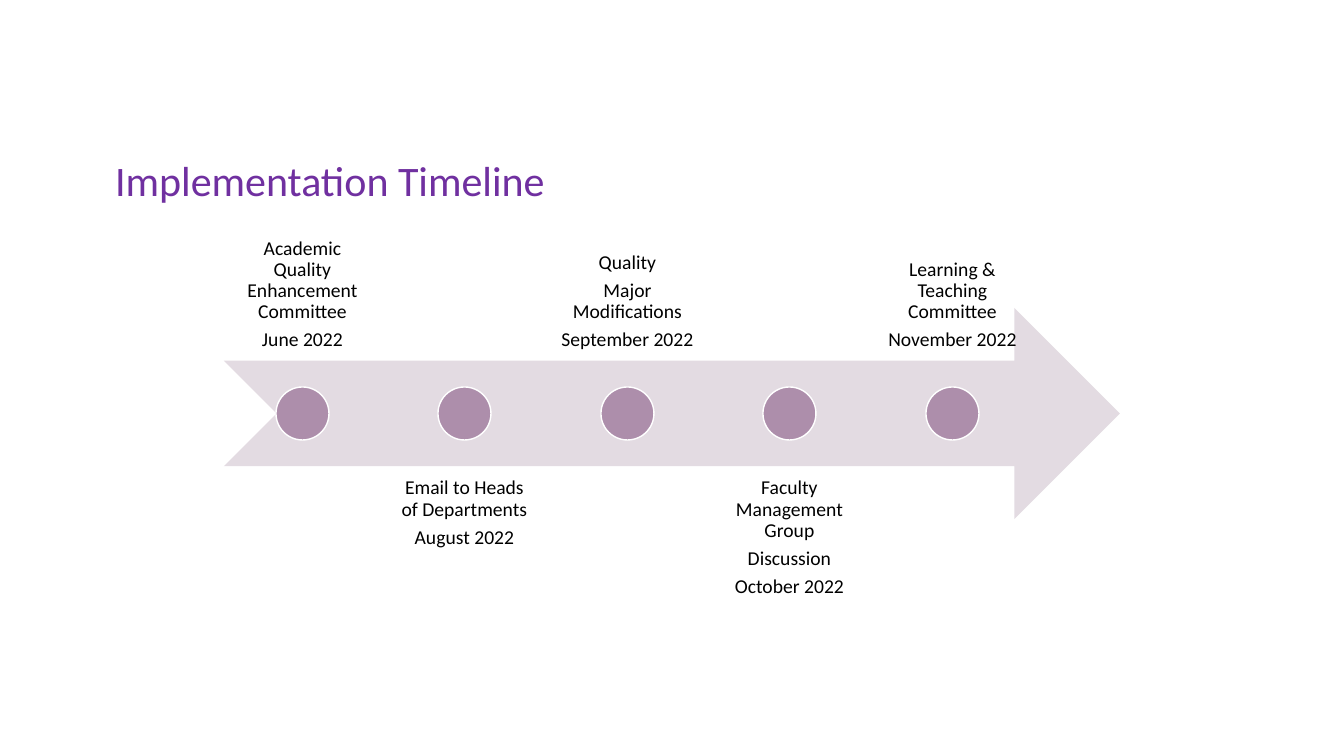
from pptx import Presentation
from pptx.dml.color import RGBColor
from pptx.enum.shapes import MSO_SHAPE
from pptx.enum.text import MSO_ANCHOR, MSO_AUTO_SIZE, PP_ALIGN
from pptx.util import Pt

PX = 914400 / 100.8
SLIDE_W, SLIDE_H = 1344, 756
ARROW_X, ARROW_Y, ARROW_W, ARROW_H = 224, 308, 896, 211
MIDDLE_Y = 413
FIRST_X, LAST_X = 302, 952
DOT = 53
LABEL_W, LABEL_H = 155, 211
UPPER_Y, LOWER_Y = 151, 467

MILESTONES = [
    ("Academic Quality Enhancement Committee", "June 2022"),
    ("Email to Heads of Departments", "August 2022"),
    ("Quality", "Major Modifications", "September 2022"),
    ("Faculty Management Group", "Discussion", "October 2022"),
    ("Learning & Teaching Committee", "November 2022"),
]


def px(n):
    return round(n * PX)


def rgb(color):
    return RGBColor.from_string(color)


def write(p, text, size=14, color="000000", align=PP_ALIGN.CENTER,
          line_spacing=0.9, before=0):
    p.alignment = align
    p.line_spacing = line_spacing
    p.space_before = Pt(before)
    r = p.add_run()
    r.text = text
    r.font.name = "Calibri"
    r.font.size = Pt(size)
    r.font.color.rgb = rgb(color)


class TimelineSlide:
    ARROW_FILL = "E3DBE2"
    DOT_FILL = "AD8EAB"
    DOT_LINE = "FFFFFF"
    TITLE_COLOR = "7030A0"

    def __init__(self, prs):
        self.s = prs.slides.add_slide(prs.slide_layouts[5])

    def title(self, text, x, y, w, h):
        sp = self.s.shapes.title
        sp.left, sp.top, sp.width, sp.height = map(px, (x, y, w, h))
        tf = sp.text_frame
        tf.word_wrap = True
        tf.auto_size = MSO_AUTO_SIZE.SHAPE_TO_FIT_TEXT
        tf.vertical_anchor = MSO_ANCHOR.TOP
        write(tf.paragraphs[0], text, size=30, color=self.TITLE_COLOR,
              align=PP_ALIGN.LEFT, line_spacing=1.0)

    def shape(self, kind, x, y, w, h, fill, line=None):
        sp = self.s.shapes.add_shape(kind, *map(px, (x, y, w, h)))
        sp.shadow.inherit = False
        sp.fill.solid()
        sp.fill.fore_color.rgb = rgb(fill)
        if line:
            sp.line.color.rgb = rgb(line)
            sp.line.width = Pt(1)
        else:
            sp.line.fill.background()

    def arrow(self, x, y, w, h):
        self.shape(MSO_SHAPE.NOTCHED_RIGHT_ARROW, x, y, w, h, self.ARROW_FILL)

    def dot(self, center_x, center_y):
        self.shape(MSO_SHAPE.OVAL, center_x - DOT // 2, center_y - DOT // 2,
                   DOT, DOT, self.DOT_FILL, self.DOT_LINE)

    def label(self, lines, center_x, above):
        y = UPPER_Y if above else LOWER_Y
        box = (center_x - LABEL_W // 2, y, LABEL_W, LABEL_H)
        tf = self.s.shapes.add_textbox(*map(px, box)).text_frame
        tf.word_wrap = True
        tf.vertical_anchor = MSO_ANCHOR.BOTTOM if above else MSO_ANCHOR.TOP
        tf.margin_left = tf.margin_right = px(11)
        tf.margin_top = tf.margin_bottom = px(11)
        for i, line in enumerate(lines):
            p = tf.add_paragraph() if i else tf.paragraphs[0]
            write(p, line, before=4.9 if i else 0)


def main():
    prs = Presentation()
    prs.slide_width, prs.slide_height = px(SLIDE_W), px(SLIDE_H)
    slide = TimelineSlide(prs)
    slide.title("Implementation Timeline", 105, 149, 1159, 61)
    slide.arrow(ARROW_X, ARROW_Y, ARROW_W, ARROW_H)
    step = (LAST_X - FIRST_X) / (len(MILESTONES) - 1)
    for i, lines in enumerate(MILESTONES):
        x = int(FIRST_X + i * step)
        slide.label(lines, x, above=i % 2 == 0)
        slide.dot(x, MIDDLE_Y)
    prs.save("out.pptx")


if __name__ == "__main__":
    main()
